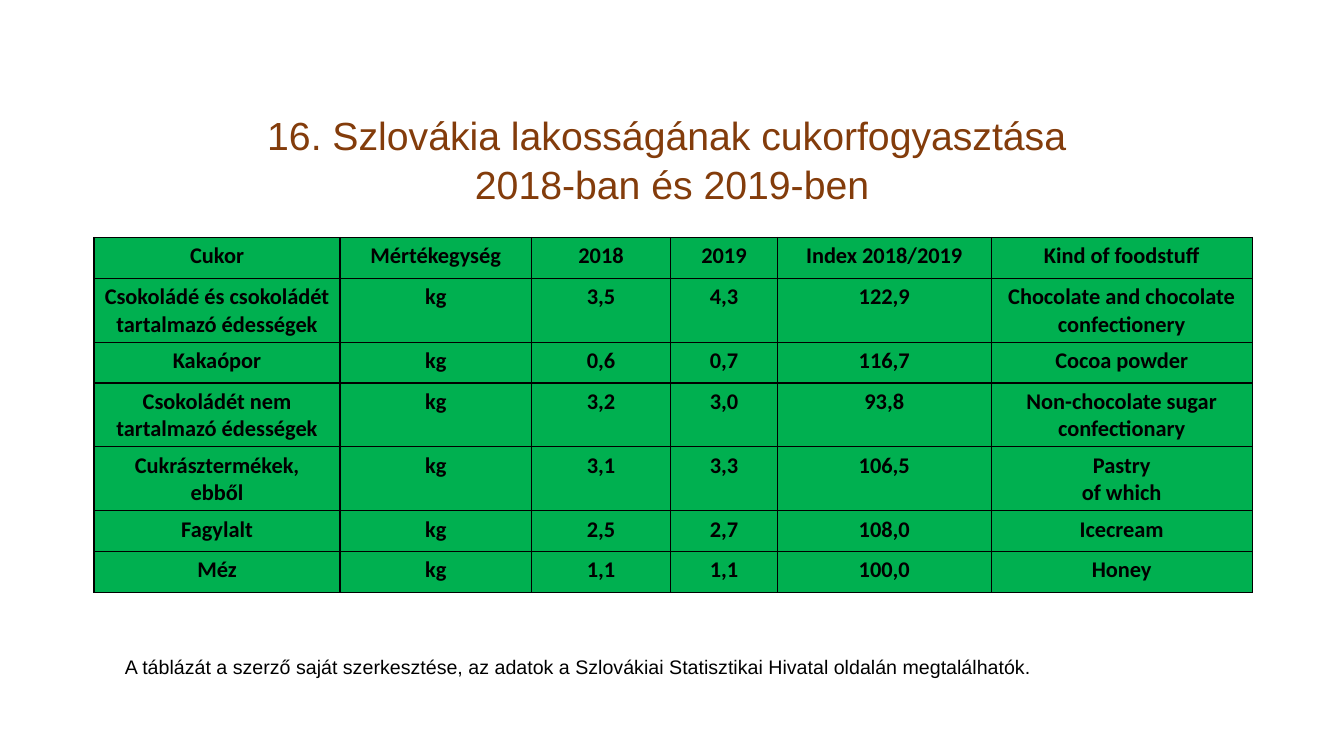
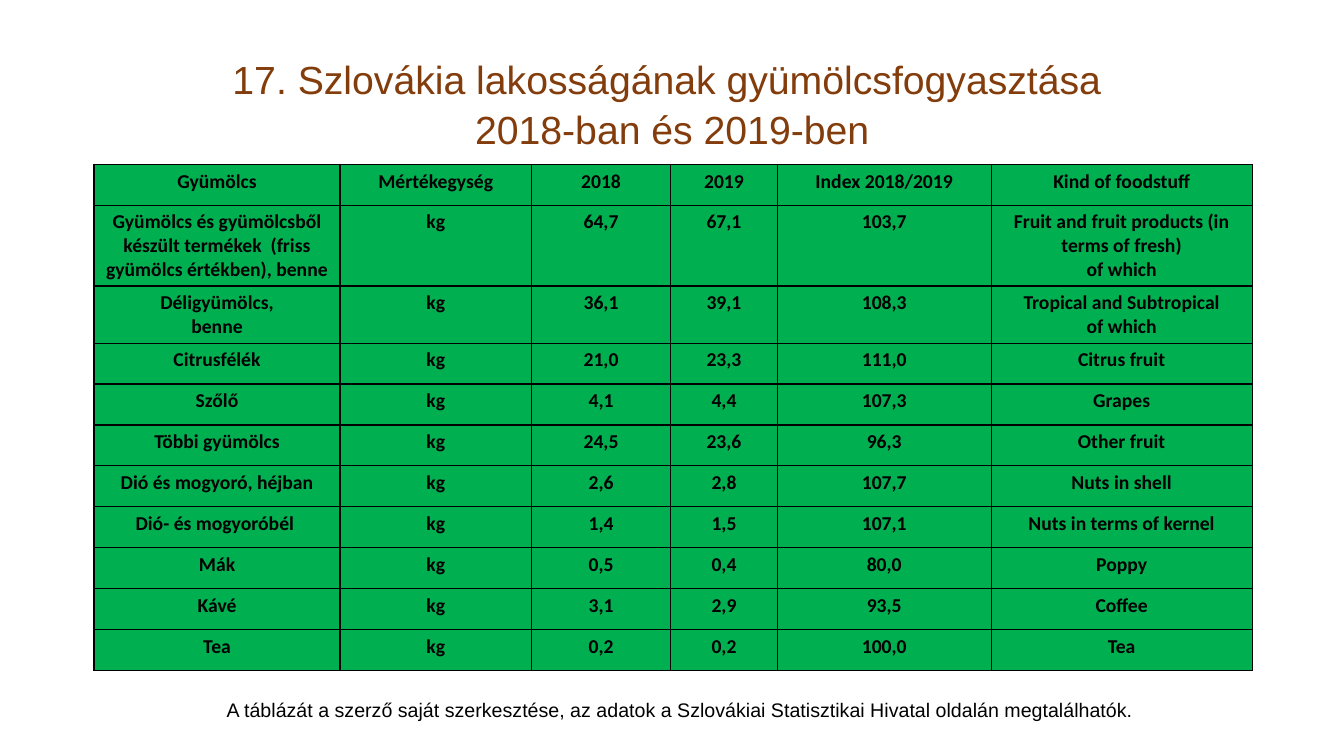
from lxml.etree import SubElement as Sub
from pptx import Presentation
from pptx.dml.color import RGBColor as Rgb
from pptx.enum.text import MSO_AUTO_SIZE as Fit, PP_ALIGN as Align
from pptx.oxml.ns import qn
from pptx.util import Inches, Pt

HUES = {"title": "833C0B", "text": "000000", "cell": "00B050", "line": "000000"}
FORMS = {
    "title": {"name": "Arial", "size": Pt(28)},
    "note": {"name": "Arial", "size": Pt(14)},
    "cell": {"name": "Calibri", "bold": True},
}
COLS = (18.3, 14.25, 10.35, 7.95, 15.9, 19.43)
ROW = 5.41
EDGE = 7
UNIT = "kg"
HEADS = ("Mértékegység", "2018", "2019", "Index 2018/2019", "Kind of foodstuff")
YEARS = "2018-ban és 2019-ben"
NOTE = ("A táblázát a szerző saját szerkesztése, az adatok a Szlovákiai "
        "Statisztikai Hivatal oldalán megtalálhatók.")

SUGAR = (
    ("Csokoládé és csokoládét tartalmazó édességek", "3,5", "4,3", "122,9",
     "Chocolate and chocolate confectionery"),
    ("Kakaópor", "0,6", "0,7", "116,7", "Cocoa powder"),
    ("Csokoládét nem tartalmazó édességek", "3,2", "3,0", "93,8",
     "Non-chocolate sugar confectionary"),
    ("Cukrásztermékek,\nebből", "3,1", "3,3", "106,5", "Pastry\nof which"),
    ("Fagylalt", "2,5", "2,7", "108,0", "Icecream"),
    ("Méz", "1,1", "1,1", "100,0", "Honey"),
)
FRUIT = (
    ("Gyümölcs és gyümölcsből készült termékek  (friss gyümölcs értékben), benne",
     "64,7", "67,1", "103,7",
     "Fruit and fruit products (in terms of fresh)\nof which"),
    ("Déligyümölcs,\nbenne", "36,1", "39,1", "108,3",
     "Tropical and Subtropical\nof which"),
    ("Citrusfélék", "21,0", "23,3", "111,0", "Citrus fruit"),
    ("Szőlő", "4,1", "4,4", "107,3", "Grapes"),
    ("Többi gyümölcs", "24,5", "23,6", "96,3", "Other fruit"),
    ("Dió és mogyoró, héjban", "2,6", "2,8", "107,7", "Nuts in shell"),
    ("Dió- és mogyoróbél ", "1,4", "1,5", "107,1", "Nuts in terms of kernel"),
    ("Mák", "0,5", "0,4", "80,0", "Poppy"),
    ("Kávé", "3,1", "2,9", "93,5", "Coffee"),
    ("Tea", "0,2", "0,2", "100,0", "Tea"),
)


class Deck:
    """Places elements on a grid of 100 columns by 100 rows."""

    def __init__(self):
        self.prs = Presentation()
        self.prs.slide_width = Inches(13.33)
        self.prs.slide_height = Inches(7.5)

    def page(self):
        self.slide = self.prs.slides.add_slide(self.prs.slide_layouts[6])

    def wide(self, cols):
        return round(self.prs.slide_width * cols / 100)

    def high(self, rows):
        return round(self.prs.slide_height * rows / 100)

    def area(self, x, y, w, h):
        return self.wide(x), self.high(y), self.wide(w), self.high(h)

    def label(self, frame, text, form, hue="text", align=Align.CENTER, space=None):
        frame.text = text
        for para in frame.paragraphs:
            para.alignment = align
            para.line_spacing = space
            for run in para.runs:
                for key, val in form.items():
                    setattr(run.font, key, val)
                run.font.color.rgb = Rgb.from_string(HUES[hue])

    def box(self, spot, text, form, **look):
        frame = self.slide.shapes.add_textbox(*self.area(*spot)).text_frame
        frame.word_wrap = True
        frame.auto_size = Fit.SHAPE_TO_FIT_TEXT
        self.label(frame, text, form, **look)

    def title(self, spot, text):
        self.box(spot, text, FORMS["title"], hue="title", space=1.05)

    def note(self, x, y):
        self.box((x, y, 69.4, 7.6), NOTE, FORMS["note"], align=Align.LEFT)

    def frame(self, cell):
        """Draws a thin line on all four sides of a cell."""
        props = cell._tc.get_or_add_tcPr()
        for side in ("lnL", "lnR", "lnT", "lnB"):
            line = Sub(props, qn(f"a:{side}"), w=str(Pt(1)))
            Sub(Sub(line, qn("a:solidFill")), qn("a:srgbClr"), val=HUES["line"])

    def table(self, y, size, name, foods):
        rows = [(name, *HEADS)] + [(food[0], UNIT, *food[1:]) for food in foods]
        spot = self.area(EDGE, y, sum(COLS), ROW * len(rows))
        grid = self.slide.shapes.add_table(len(rows), len(COLS), *spot).table
        grid.first_row = grid.horz_banding = False
        for col, cols in zip(grid.columns, COLS):
            col.width = self.wide(cols)
        for row, texts in zip(grid.rows, rows):
            row.height = self.high(ROW)
            for cell, text in zip(row.cells, texts):
                self.frame(cell)
                cell.fill.solid()
                cell.fill.fore_color.rgb = Rgb.from_string(HUES["cell"])
                self.label(cell.text_frame, text, {**FORMS["cell"], "size": Pt(size)})


def main():
    deck = Deck()

    deck.page()
    deck.title((18.75, 13.73, 62.5, 13.87),
               f"16. Szlovákia lakosságának cukorfogyasztása \n{YEARS}")
    deck.table(31.4, 16, "Cukor", SUGAR)
    deck.note(8.55, 86)

    deck.page()
    deck.title((16.13, 6.4, 67.75, 17.07),
               f"17. Szlovákia lakosságának gyümölcsfogyasztása \n{YEARS}")
    deck.table(21.75, 14, "Gyümölcs", FRUIT)
    deck.note(16.13, 91.6)

    deck.prs.save("out.pptx")


if __name__ == "__main__":
    main()
